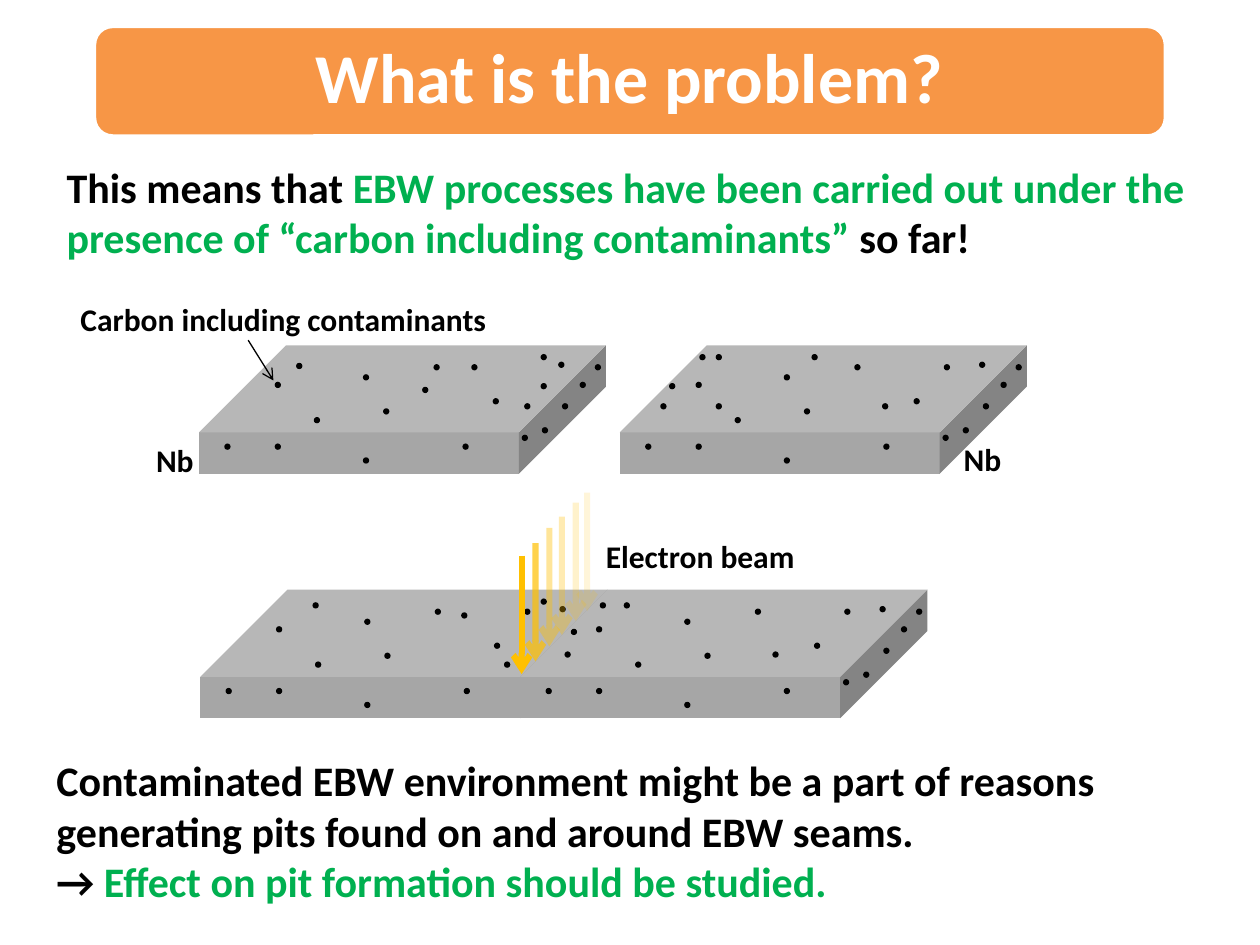
from typing import NamedTuple, Optional

from pptx import Presentation
from pptx.dml.color import RGBColor
from pptx.enum.shapes import MSO_CONNECTOR, MSO_SHAPE
from pptx.enum.text import MSO_ANCHOR, MSO_AUTO_SIZE, PP_ALIGN
from pptx.oxml.ns import qn
from pptx.util import Inches, Pt
from lxml.etree import SubElement

COLORS = {"black": "000000", "white": "FFFFFF", "green": "00B050",
          "orange": "F79646", "niobium": "A6A6A6", "beam": "FFC000"}
FONT = "Calibri"
DOT_SIZE = 0.05
PLATE_SIZE = (3.23, 1.02)
BEAM_LENGTH = 0.94


class Point(NamedTuple):
    x: float
    y: float


class Run(NamedTuple):
    text: str
    color: str = "black"


class Plate(NamedTuple):
    left: float
    top: float
    # Where the movable dot sits, measured from the plate's corner
    movable_dot: Point = Point(2.57, 0.15)


class Beam(NamedTuple):
    x: float
    top: float
    opacity: Optional[int] = None


# Dots that every plate carries, measured from its top left corner
PLATE_DOTS = [Point(*dot) for dot in (
    (2.85, 0.13), (1.86, 0.15), (2.33, 0.42), (1.30, 0.23), (1.46, 0.50), (0.60, 0.29),
    (0.91, 0.57), (0.20, 0.78), (0.60, 0.78), (1.30, 0.89), (2.09, 0.78), (3.02, 0.29),
    (2.88, 0.46), (2.72, 0.65), (3.14, 0.15), (2.56, 0.71))]

SEPARATE_PLATES = [Plate(1.58, 2.74, Point(2.16, 0.15)), Plate(4.92, 2.74)]
JOINED_PLATES = [Plate(1.59, 4.68), Plate(4.13, 4.68)]

# Dots that belong to single plates, in slide positions
SCATTERED_DOTS = [Point(*dot) for dot in (
    (5.55, 2.81), (5.24, 3.20), (5.68, 2.81), (5.31, 3.04), (6.44, 2.81), (4.16, 3.20),
    (4.29, 3.04), (4.29, 2.81), (2.35, 2.88), (7.00, 3.20), (3.35, 3.07), (4.29, 4.75),
    (4.00, 5.25), (4.48, 5.17), (4.53, 4.99), (4.76, 4.78), (4.95, 4.78), (2.48, 4.78),
    (6.13, 5.17), (5.68, 3.20), (3.66, 4.86))]

BEAMS = [Beam(4.66, 3.91, 15), Beam(4.57, 3.99, 20), Beam(4.46, 4.10, 30),
         Beam(4.36, 4.19, 40), Beam(4.25, 4.31, 70), Beam(4.14, 4.41)]


def rgb(name: str) -> RGBColor:
    return RGBColor.from_string(COLORS[name])


def add_filled_shape(slide, kind, left: float, top: float, width: float, height: float,
                     color: str):
    shape = slide.shapes.add_shape(kind, Inches(left), Inches(top), Inches(width),
                                   Inches(height))
    shape.shadow.inherit = False
    shape.fill.solid()
    shape.fill.fore_color.rgb = rgb(color)
    shape.line.fill.background()
    return shape


def add_dot(slide, left: float, top: float) -> None:
    add_filled_shape(slide, MSO_SHAPE.OVAL, left, top, DOT_SIZE, DOT_SIZE, "black")


def add_plate(slide, plate: Plate) -> None:
    cube = add_filled_shape(slide, MSO_SHAPE.CUBE, plate.left, plate.top, *PLATE_SIZE,
                            "niobium")
    cube.adjustments[0] = 0.678
    for dot in [*PLATE_DOTS, plate.movable_dot]:
        add_dot(slide, plate.left + dot.x, plate.top + dot.y)


def add_arrow(slide, start: Point, end: Point, color: str, width: float,
              opacity: Optional[int] = None) -> None:
    """Draw an open-headed arrow; opacity is in percent."""
    arrow = slide.shapes.add_connector(MSO_CONNECTOR.STRAIGHT, Inches(start.x),
                                       Inches(start.y), Inches(end.x), Inches(end.y))
    arrow.line.color.rgb = rgb(color)
    arrow.line.width = Pt(width)
    line = arrow.line._get_or_add_ln()
    if opacity is not None:
        color_element = line.find(".//" + qn("a:srgbClr"))
        SubElement(color_element, qn("a:alpha"), val=str(opacity * 1000))
    SubElement(line, qn("a:tailEnd"), type="arrow")
    SubElement(arrow._element.spPr, qn("a:effectLst"))


def write_text(text_frame, paragraphs: list[list[Run]], *, size: float, wrap: bool = True,
               align=PP_ALIGN.LEFT) -> None:
    text_frame.word_wrap = wrap
    for index, runs in enumerate(paragraphs):
        paragraph = text_frame.paragraphs[0] if index == 0 else text_frame.add_paragraph()
        paragraph.alignment = align
        for content in runs:
            run = paragraph.add_run()
            run.text = content.text
            run.font.name = FONT
            run.font.size = Pt(size)
            run.font.bold = True
            run.font.color.rgb = rgb(content.color)


def add_text(slide, left: float, top: float, width: float, height: float,
             paragraphs: list[list[Run]], *, size: float = 18, wrap: bool = False) -> None:
    box = slide.shapes.add_textbox(Inches(left), Inches(top), Inches(width), Inches(height))
    write_text(box.text_frame, paragraphs, size=size, wrap=wrap)
    box.text_frame.auto_size = MSO_AUTO_SIZE.SHAPE_TO_FIT_TEXT


def add_title(slide, text: str) -> None:
    banner = add_filled_shape(slide, MSO_SHAPE.ROUNDED_RECTANGLE, 0.75, 0.21, 8.5, 0.87,
                              "orange")
    banner.line.color.rgb = rgb("white")
    banner.line.width = Pt(2)
    title = slide.shapes.title
    title._element.addprevious(banner._element)
    title.left, title.top = Inches(0.81), Inches(0.25)
    title.width, title.height = Inches(8.37), Inches(0.78)
    frame = title.text_frame
    write_text(frame, [[Run(text, "white")]], size=40, align=PP_ALIGN.CENTER)
    frame.auto_size = MSO_AUTO_SIZE.NONE
    frame.vertical_anchor = MSO_ANCHOR.MIDDLE
    frame.margin_left = frame.margin_right = Inches(0.1)
    frame.margin_top = frame.margin_bottom = Inches(0.1)
    frame.paragraphs[0].line_spacing = 0.9


def main() -> None:
    presentation = Presentation()
    presentation.slide_width, presentation.slide_height = Inches(10), Inches(7.5)
    slide = presentation.slides.add_slide(presentation.slide_layouts[5])

    add_title(slide, "What is the problem?")
    add_text(slide, 0.43, 1.23, 9.13, 0.91, [[
        Run("This means that "),
        Run("EBW processes have been carried out under the presence of "
            "“carbon including contaminants” ", "green"),
        Run("so far!")]], size=24, wrap=True)
    add_text(slide, 0.35, 5.94, 9.53, 1.31, [
        [Run("Contaminated EBW environment might be a part of reasons generating pits "
             "found on and around EBW seams.")],
        [Run("→ "), Run("Effect on pit formation should be studied.", "green")],
    ], size=24, wrap=True)

    for plate in SEPARATE_PLATES + JOINED_PLATES:
        add_plate(slide, plate)
    add_text(slide, 7.55, 3.44, 0.5, 0.4, [[Run("Nb")]])
    add_text(slide, 1.14, 3.45, 0.5, 0.4, [[Run("Nb")]])
    add_text(slide, 0.54, 2.33, 3.45, 0.4, [[Run("Carbon including contaminants")]])
    add_arrow(slide, Point(1.97, 2.7), Point(2.17, 3.02), "black", 0.75)

    for beam in BEAMS:
        add_arrow(slide, Point(beam.x, beam.top), Point(beam.x, beam.top + BEAM_LENGTH),
                  "beam", 3.5, beam.opacity)
    add_text(slide, 4.71, 4.21, 1.71, 0.4, [[Run("Electron beam")]])
    for dot in SCATTERED_DOTS:
        add_dot(slide, dot.x, dot.y)

    presentation.save("out.pptx")


if __name__ == "__main__":
    main()
